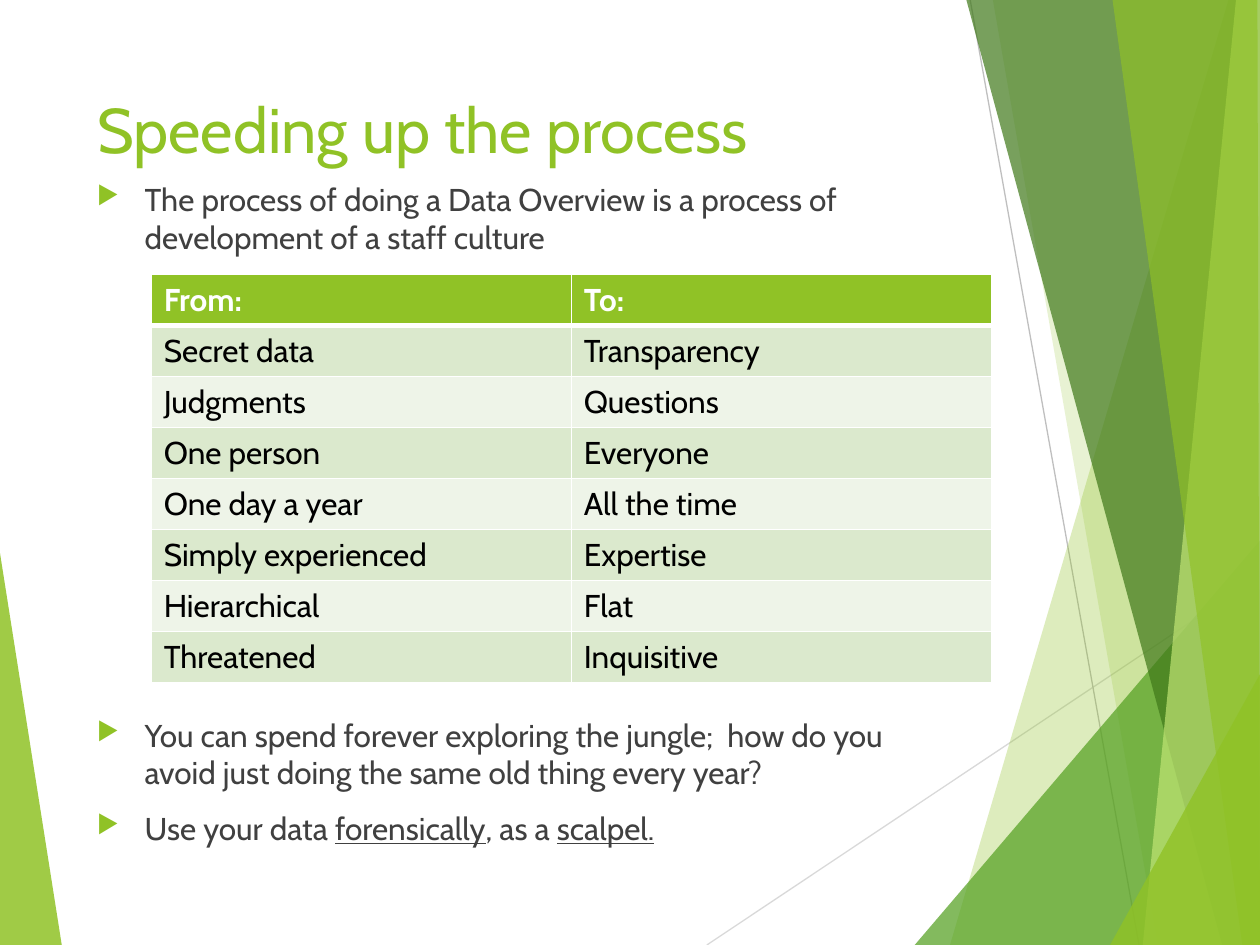
from dataclasses import dataclass

from lxml import etree
from pptx import Presentation
from pptx.dml.color import RGBColor
from pptx.enum.shapes import MSO_CONNECTOR
from pptx.enum.text import MSO_ANCHOR, MSO_AUTO_SIZE, PP_ALIGN
from pptx.oxml.ns import qn
from pptx.util import Inches, Pt

STRAIGHT = MSO_CONNECTOR.STRAIGHT
TOP, MIDDLE = MSO_ANCHOR.TOP, MSO_ANCHOR.MIDDLE
LEFT = PP_ALIGN.LEFT
NO_FIT = MSO_AUTO_SIZE.NONE


@dataclass(frozen=True)
class Theme:
    font: str = "Cabin"
    title_size: int = 36
    body_size: int = 18
    accent: str = "90C226"
    green: str = "54A021"
    dark_green: str = "3F7819"
    light_green: str = "C0E474"
    text: str = "404040"
    black: str = "000000"
    white: str = "FFFFFF"
    bands: tuple = ("DBE9CD", "EEF4E8")
    rule_light: str = "D9D9D9"
    rule_dark: str = "BFBFBF"


THEME = Theme()

LEFT_FACET = ([(0, 4.39), (0.49, 7.5), (0, 7.5)], THEME.accent, 85)
RIGHT_FACETS = [
    ([(9.75, 0), (7.54, 7.5), (10, 7.5), (10, 0)], THEME.accent, 30),
    ([(7.88, 0), (9.19, 7.5), (10, 7.5), (10, 0)], THEME.accent, 20),
    ([(7.26, 7.5), (10, 4.29), (10, 7.5)], THEME.green, 72),
    ([(7.67, 0), (9.7, 7.5), (10, 7.5), (10, 0)], THEME.dark_green, 70),
    ([(9.81, 0), (9.07, 7.5), (10, 7.5), (10, 0)], THEME.light_green, 70),
    ([(8.83, 0), (9.86, 7.5), (10, 7.5), (9.98, 0)], THEME.accent, 65),
    ([(8.81, 7.5), (10, 5.35), (10, 7.5)], THEME.accent, 80),
]
RULES = [
    ((5.61, 7.5), (10, 4.57), THEME.rule_light),
    ((7.7, 0), (9.04, 7.5), THEME.rule_dark),
]
INTRO = [
    [("The process of doing a Data Overview is a process of "
      "development of a staff culture", False)],
]
CLOSING = [
    [("You can spend forever exploring the jungle;  how do you "
      "avoid just doing the same old thing every year?", False)],
    [("Use your data ", False), ("forensically", True),
     (", as a ", False), ("scalpel.", True)],
]
SHIFTS = [
    ("From:", "To:"),
    ("Secret data", "Transparency"),
    ("Judgments", "Questions"),
    ("One person", "Everyone"),
    ("One day a year", "All the time"),
    ("Simply experienced", "Expertise"),
    ("Hierarchical", "Flat"),
    ("Threatened", "Inquisitive"),
]


def add_run(p, text, size, color, bold=False, underline=False):
    r = p.add_run()
    r.text = text
    r.font.name = THEME.font
    r.font.size = Pt(size)
    r.font.color.rgb = RGBColor.from_string(color)
    r.font.bold = bold
    r.font.underline = underline


def add_facet(s, points, color, opacity):
    corners = [(Inches(x), Inches(y)) for x, y in points]
    builder = s.shapes.build_freeform(*corners[0])
    builder.add_line_segments(corners[1:], close=True)
    sp = builder.convert_to_shape()
    sp.shadow.inherit = False
    sp.line.fill.background()
    sp.fill.solid()
    sp.fill.fore_color.rgb = RGBColor.from_string(color)
    clr = sp.fill._xPr.find(qn("a:solidFill"))[0]
    etree.SubElement(clr, qn("a:alpha"), val=str(opacity * 1000))


def add_rule(s, start, end, color):
    line = s.shapes.add_connector(STRAIGHT, *map(Inches, start + end))
    line.line.color.rgb = RGBColor.from_string(color)
    line.line.width = Pt(0.75)
    etree.SubElement(line._element.spPr, qn("a:effectLst"))


def set_title(s, text):
    title = s.shapes.title
    title.left, title.top = Inches(0.67), Inches(0.67)
    title.width, title.height = Inches(6.94), Inches(0.8)
    tf = title.text_frame
    tf.auto_size = NO_FIT
    tf.vertical_anchor = TOP
    p = tf.paragraphs[0]
    p.alignment = LEFT
    add_run(p, text, THEME.title_size, THEME.accent)


def add_bullet(p):
    pPr = p._p.get_or_add_pPr()
    pPr.set("marL", str(Inches(0.38)))
    pPr.set("indent", str(Inches(-0.38)))
    clr = etree.SubElement(pPr, qn("a:buClr"))
    etree.SubElement(clr, qn("a:srgbClr"), val=THEME.accent)
    etree.SubElement(pPr, qn("a:buSzPct"), val="80000")
    etree.SubElement(pPr, qn("a:buChar"), char="▶")


def add_bullets(s, top, height, items):
    box = s.shapes.add_textbox(Inches(0.67), Inches(top), Inches(6.94), Inches(height))
    tf = box.text_frame
    tf.word_wrap = True
    for i, item in enumerate(items):
        p = tf.add_paragraph() if i else tf.paragraphs[0]
        add_bullet(p)
        p.space_before = Pt(10 if i else 0)
        for text, underline in item:
            add_run(p, text, THEME.body_size, THEME.text, underline=underline)


def set_borders(cell, row):
    widths = {"L": 1, "R": 1, "T": 3 if row == 1 else 1, "B": 3 if row == 0 else 1}
    tcPr = cell._tc.get_or_add_tcPr()
    for side, width in widths.items():
        ln = etree.SubElement(tcPr, qn(f"a:ln{side}"), w=str(Pt(width)))
        fill = etree.SubElement(ln, qn("a:solidFill"))
        etree.SubElement(fill, qn("a:srgbClr"), val=THEME.white)


def add_shift_table(s, rows):
    table = s.shapes.add_table(len(rows), len(rows[0]), Inches(1.2), Inches(2.18),
                               Inches(6.67), Inches(3.24)).table
    table.horz_banding = False
    for i, row in enumerate(rows):
        header = i == 0
        fill = THEME.accent if header else THEME.bands[(i - 1) % 2]
        for j, text in enumerate(row):
            cell = table.cell(i, j)
            set_borders(cell, i)
            cell.fill.solid()
            cell.fill.fore_color.rgb = RGBColor.from_string(fill)
            cell.vertical_anchor = TOP
            add_run(cell.text_frame.paragraphs[0], text, THEME.body_size,
                    THEME.white if header else THEME.black, bold=header)


def main():
    prs = Presentation()
    prs.slide_width, prs.slide_height = Inches(10), Inches(7.5)
    s = prs.slides.add_slide(prs.slide_layouts[5])
    add_facet(s, *LEFT_FACET)
    for rule in RULES:
        add_rule(s, *rule)
    for facet in RIGHT_FACETS:
        add_facet(s, *facet)
    set_title(s, "Speeding up the process")
    add_bullets(s, 1.38, 0.71, INTRO)
    add_bullets(s, 5.63, 1.16, CLOSING)
    add_shift_table(s, SHIFTS)
    prs.save("out.pptx")


if __name__ == "__main__":
    main()
